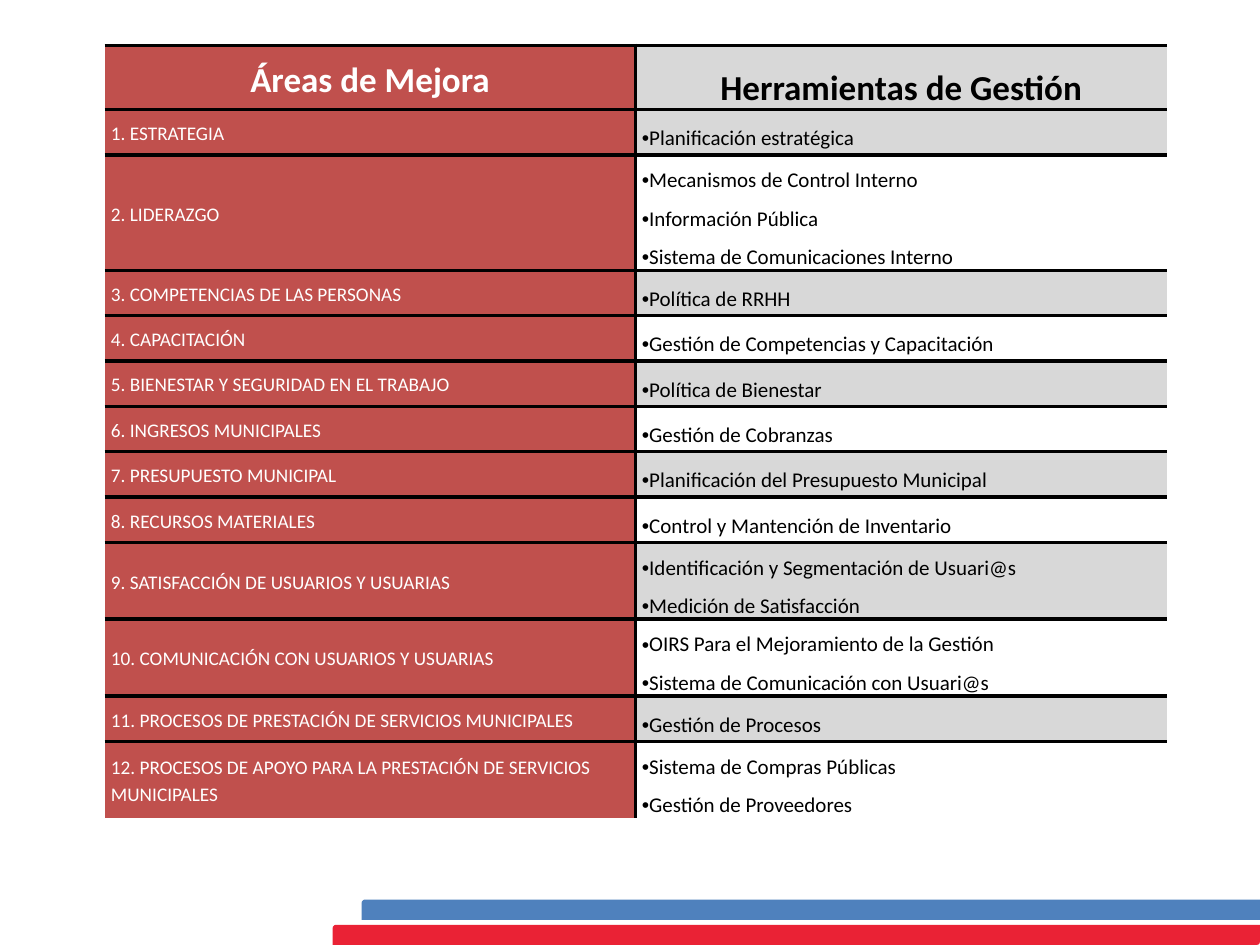
from lxml import etree
from pptx import Presentation
from pptx.dml.color import RGBColor as RGB
from pptx.enum.shapes import MSO_SHAPE as Shape
from pptx.enum.text import MSO_ANCHOR as Anchor, PP_ALIGN as Align
from pptx.oxml.ns import qn
from pptx.util import Inches, Pt

COLORS = {"red": "C0504D", "gray": "D8D8D8", "black": "000000",
          "white": "FFFFFF", "blue": "4F81BD", "flag": "EA2235"}

ROWS = [
    ("Áreas de Mejora", ["Herramientas de Gestión"]),
    ("1. ESTRATEGIA", ["Planificación estratégica"]),
    ("2. LIDERAZGO", ["Mecanismos de Control Interno", "Información Pública",
                      "Sistema de Comunicaciones Interno"]),
    ("3. COMPETENCIAS DE LAS PERSONAS", ["Política de RRHH"]),
    ("4. CAPACITACIÓN", ["Gestión de Competencias y Capacitación"]),
    ("5. BIENESTAR Y SEGURIDAD EN EL TRABAJO", ["Política de Bienestar"]),
    ("6. INGRESOS MUNICIPALES", ["Gestión de Cobranzas"]),
    ("7. PRESUPUESTO MUNICIPAL", ["Planificación del Presupuesto Municipal"]),
    ("8. RECURSOS MATERIALES", ["Control y Mantención de Inventario"]),
    ("9. SATISFACCIÓN DE USUARIOS Y USUARIAS",
     ["Identificación y Segmentación de Usuari@s", "Medición de Satisfacción"]),
    ("10. COMUNICACIÓN CON USUARIOS Y USUARIAS",
     ["OIRS Para el Mejoramiento de la Gestión",
      "Sistema de Comunicación con Usuari@s"]),
    ("11. PROCESOS DE PRESTACIÓN DE SERVICIOS MUNICIPALES",
     ["Gestión de Procesos"]),
    ("12. PROCESOS DE APOYO PARA LA PRESTACIÓN DE SERVICIOS MUNICIPALES",
     ["Sistema de Compras Públicas", "Gestión de Proveedores"]),
]


def border(cell, sides):
    """Draw black lines on the given sides (of L, R, T, B), none on the others."""
    props = cell._tc.get_or_add_tcPr()
    for side in "LRTB":
        line = etree.SubElement(props, qn(f"a:ln{side}"), w=str(Pt(2.25)))
        if side in sides:
            fill = etree.SubElement(line, qn("a:solidFill"))
            etree.SubElement(fill, qn("a:srgbClr"), val=COLORS["black"])
        else:
            etree.SubElement(line, qn("a:noFill"))


def write(cell, lines, size, color, align, spacing, after, bold, bullet):
    cell.vertical_anchor = Anchor.MIDDLE
    cell.margin_left = cell.margin_right = Inches(0.05)
    cell.margin_top = cell.margin_bottom = 0
    cell.text_frame.text = "\n".join(lines)
    for para in cell.text_frame.paragraphs:
        para.alignment, para.line_spacing = align, spacing
        para.space_after = Pt(after)
        if bullet:
            props = para._p.get_or_add_pPr()
            etree.SubElement(props, qn("a:buFont"), typeface="Arial")
            etree.SubElement(props, qn("a:buChar"), char="•")
        for run in para.runs:
            font = run.font
            font.name, font.size, font.bold = "Calibri", Pt(size), bold
            font.color.rgb = RGB.from_string(COLORS[color])


prs = Presentation()
prs.slide_width, prs.slide_height = Inches(10), Inches(7.5)
slide = prs.slides.add_slide(prs.slide_layouts[6])

for left, top, color in [(2.87, 7.14, "blue"), (2.64, 7.34, "flag")]:
    bar = slide.shapes.add_shape(Shape.ROUND_2_DIAG_RECTANGLE, Inches(left),
                                 Inches(top), Inches(7.36), Inches(0.16))
    bar.shadow.inherit = False
    bar.fill.solid()
    bar.fill.fore_color.rgb = RGB.from_string(COLORS[color])
    bar.line.fill.background()

frame = slide.shapes.add_table(len(ROWS), 2, Inches(0.83), Inches(0.36),
                               Inches(8.43), Inches(6.08))
table = frame.table
table.first_row = table.horz_banding = False

for i, (area, tools) in enumerate(ROWS):
    table.rows[i].height = Inches(0.36)
    head = i == 0
    edges = "T" if i == len(ROWS) - 1 else "TB"
    left, right = table.cell(i, 0), table.cell(i, 1)

    write(left, [area], 20 if head else 11, "white",
          Align.CENTER if head else Align.LEFT, 1.15, 10, head, False)
    border(left, "R" + edges)
    left.fill.solid()
    left.fill.fore_color.rgb = RGB.from_string(COLORS["red"])

    write(right, tools, 20 if head else 12, "black",
          Align.CENTER if head else Align.JUSTIFY, 1.5, 10 if head else 0,
          head, not head)
    border(right, "L" + edges)
    if head or i % 2:
        right.fill.solid()
        right.fill.fore_color.rgb = RGB.from_string(COLORS["gray"])
    else:
        right.fill.background()

frame.height = Inches(6.08)
prs.save("out.pptx")
